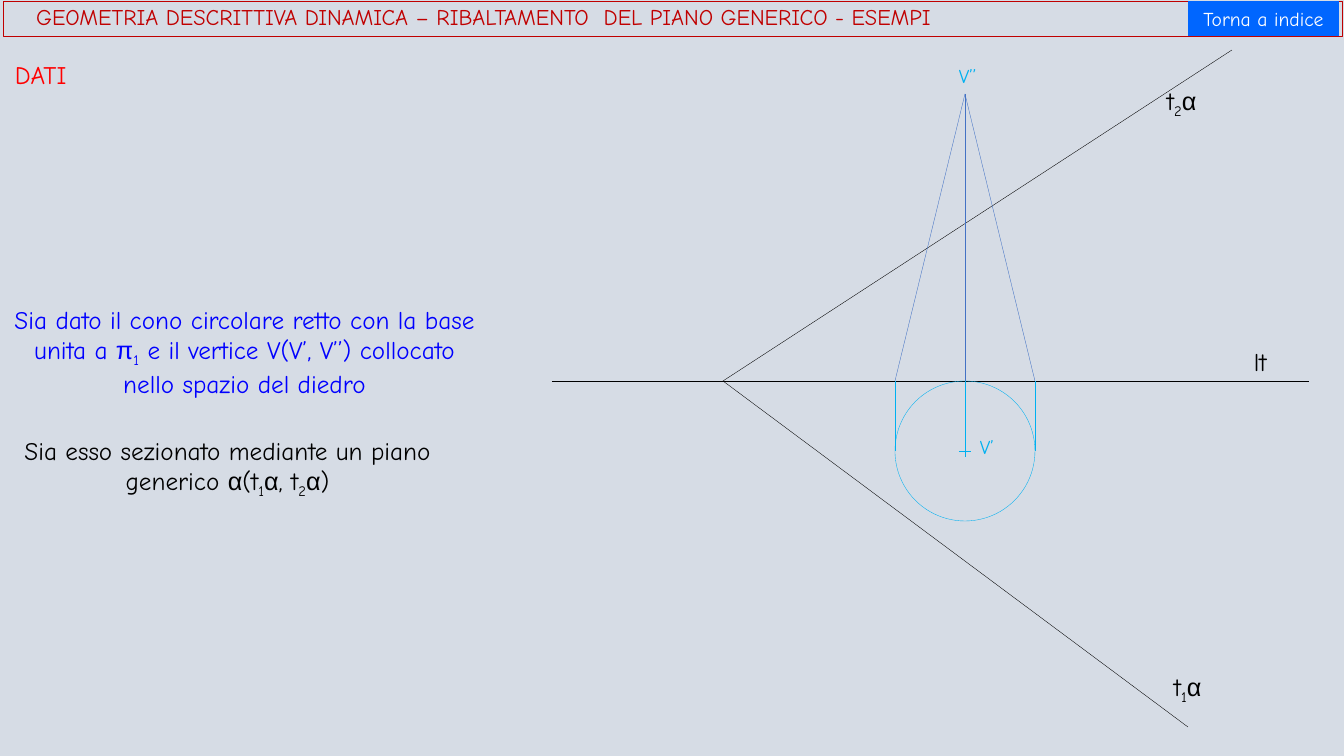
from itertools import groupby

from lxml.etree import SubElement
from pptx import Presentation
from pptx.dml.color import RGBColor
from pptx.enum.shapes import MSO_CONNECTOR, MSO_SHAPE
from pptx.enum.text import MSO_ANCHOR, MSO_AUTO_SIZE, PP_ALIGN
from pptx.oxml.ns import qn
from pptx.util import Emu, Pt

THEME = {
    "font": "Comic Neue", "greek_font": "Arial",
    "background": "D6DCE5", "black": "000000", "blue": "0000FF", "red": "FF0000",
    "dark_red": "C00000", "cyan": "00B0F0", "steel": "4472C4",
    "button": "0066FF", "white": "FFFFFF",
    "body": 18, "title": 16, "label": 14, "line": 0.25,
}

TITLE = "GEOMETRIA DESCRITTIVA DINAMICA – RIBALTAMENTO  DEL PIANO GENERICO - ESEMPI"
BUTTON = "Torna a indice"

# text, box in px, size, colour, alignment; every digit is a subscript
TEXTS = [
    ("t1α", (1164, 666, 56, 40), "body", "black", "LEFT"),
    ("lt", (1244, 341, 56, 40), "body", "black", "LEFT"),
    ("t2α", (1157, 80, 87, 40), "body", "black", "LEFT"),
    ("V’", (970, 430, 45, 34), "label", "cyan", "LEFT"),
    ("V’’", (949, 59, 47, 34), "label", "cyan", "LEFT"),
    ("Sia dato il cono circolare retto con la base unita a π1 e il vertice "
     "V(V’, V’’) collocato nello spazio del diedro",
     (0, 299, 489, 102), "body", "blue", "CENTER"),
    ("Sia esso sezionato mediante un piano generico α(t1α, t2α)",
     (0, 430, 455, 72), "body", "black", "CENTER"),
    ("DATI", (5, 54, 99, 40), "body", "red", "LEFT"),
]

# Cone axis, ground line, apex, base centre and radius, in px
AXIS, GROUND, APEX, CENTRE, RADIUS, TICK = 965, 381, 94, 451, 70, 6
TRACE_START = (723, GROUND)
LEFT, RIGHT = AXIS - RADIUS, AXIS + RADIUS

LINES = [
    ((552, GROUND), (1309, GROUND), "black"),
    (TRACE_START, (1232, 50), "black"),
    (TRACE_START, (1188, 727), "black"),
    ((AXIS, GROUND), (AXIS, CENTRE), "cyan"),
    ((AXIS, GROUND), (AXIS, APEX), "steel"),
    *[((x, CENTRE), (x, GROUND), "cyan") for x in (LEFT, RIGHT)],
    *[((x, GROUND), (AXIS, APEX), "steel") for x in (LEFT, RIGHT)],
    ((AXIS - TICK, CENTRE), (AXIS + TICK, CENTRE), "cyan"),
    ((AXIS, CENTRE - TICK), (AXIS, CENTRE + TICK), "cyan"),
]


def px(*values):
    return [Emu(round(v * 914400 / 100.8)) for v in values]


def color(name):
    return RGBColor.from_string(THEME[name])


def char_kind(c):
    return "sub" if c.isdigit() else "greek" if c in "απ" else "latin"


def write(tf, text, size, ink, align, **frame):
    """Fill a text frame, one run for each stretch of Latin, Greek or subscript."""
    for name, value in {"word_wrap": True, **frame}.items():
        setattr(tf, name, value)
    p = tf.paragraphs[0]
    p.alignment = PP_ALIGN[align]
    for kind, chars in groupby(text, char_kind):
        r = p.add_run()
        r.text = "".join(chars)
        font = THEME["greek_font" if kind == "greek" else "font"]
        for name, value in {"name": font, "size": Pt(THEME[size])}.items():
            setattr(r.font, name, value)
        r.font.color.rgb = color(ink)
        if kind == "sub":
            r.font._element.set("baseline", "-25000")
    return p


def add_outline(s, kind, box, line=None, fill=None):
    sp = s.shapes.add_shape(kind, *px(*box))
    sp.shadow.inherit = False
    if fill:
        sp.fill.solid()
        sp.fill.fore_color.rgb = color(fill)
    else:
        sp.fill.background()
    if line:
        sp.line.color.rgb = color(line)
        sp.line.width = Pt(THEME["line"])
    else:
        sp.line.fill.background()
    return sp


def add_line(s, start, end, ink):
    cx = s.shapes.add_connector(MSO_CONNECTOR.STRAIGHT, *px(*start, *end))
    cx.line.color.rgb = color(ink)
    cx.line.width = Pt(THEME["line"])
    SubElement(cx._element.spPr, qn("a:effectLst"))


def main():
    prs = Presentation()
    prs.slide_width, prs.slide_height = px(1344, 756)
    s = prs.slides.add_slide(prs.slide_layouts[6])
    s.background.fill.solid()
    s.background.fill.fore_color.rgb = color("background")

    for start, end, ink in LINES:
        add_line(s, start, end, ink)
    base = (LEFT, CENTRE - RADIUS, 2 * RADIUS, 2 * RADIUS)
    add_outline(s, MSO_SHAPE.OVAL, base, line="cyan")

    for text, box, size, ink, align in TEXTS:
        tf = s.shapes.add_textbox(*px(*box)).text_frame
        write(tf, text, size, ink, align, auto_size=MSO_AUTO_SIZE.SHAPE_TO_FIT_TEXT)

    title = add_outline(s, MSO_SHAPE.RECTANGLE, (3, 1, 1339, 35), line="dark_red")
    p = write(title.text_frame, TITLE, "title", "dark_red", "LEFT",
              vertical_anchor=MSO_ANCHOR.MIDDLE, margin_left=px(33)[0])
    p.line_spacing = 0.9

    button = add_outline(s, MSO_SHAPE.ACTION_BUTTON_CUSTOM, (1188, 1, 151, 35),
                         fill="button")
    write(button.text_frame, BUTTON, "label", "white", "CENTER",
          vertical_anchor=MSO_ANCHOR.MIDDLE)

    prs.save("out.pptx")


if __name__ == "__main__":
    main()
